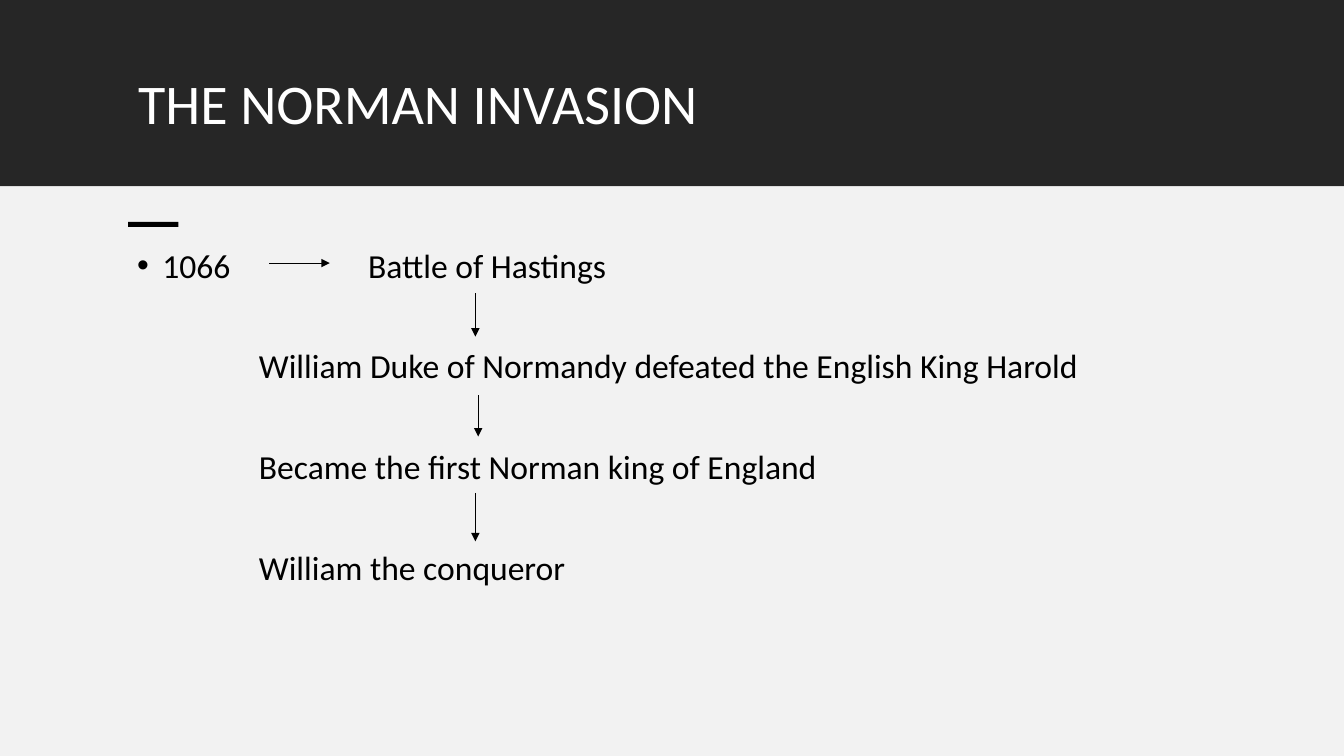
"""Build a slide on the Norman invasion as a chain of events."""
from lxml import etree
from pptx import Presentation
from pptx.dml.color import RGBColor
from pptx.enum.shapes import MSO_CONNECTOR, MSO_SHAPE
from pptx.enum.text import MSO_ANCHOR, MSO_AUTO_SIZE, PP_ALIGN
from pptx.oxml.ns import qn
from pptx.util import Cm, Pt

RECTANGLE = MSO_SHAPE.RECTANGLE
STRAIGHT = MSO_CONNECTOR.STRAIGHT
TOP, LEFT, NO_FIT = MSO_ANCHOR.TOP, PP_ALIGN.LEFT, MSO_AUTO_SIZE.NONE
FONT = "Calibri"
COLORS = {"band": "262626", "panel": "F2F2F2", "ink": "000000", "heading": "FFFFFF"}


def add_block(left, top, width, height, color):
    block = slide.shapes.add_shape(RECTANGLE, Cm(left), Cm(top), Cm(width), Cm(height))
    block.shadow.inherit = False
    block.fill.solid()
    block.fill.fore_color.rgb = RGBColor.from_string(COLORS[color])
    block.line.fill.background()
    return block


def add_text(paragraph, text, size, color):
    paragraph.alignment = LEFT
    paragraph.line_spacing = 0.9
    run = paragraph.add_run()
    run.text = text
    run.font.name = FONT
    run.font.size = Pt(size)
    run.font.color.rgb = RGBColor.from_string(COLORS[color])


prs = Presentation()
prs.slide_width, prs.slide_height = Cm(33.87), Cm(19.05)
slide = prs.slides.add_slide(prs.slide_layouts[1])
heading, events = slide.placeholders

for holder, left, top, height in ((heading, 3.23, 1.78, 2.49), (events, 3.2, 6.15, 11)):
    holder.left, holder.top = Cm(left), Cm(top)
    holder.width, holder.height = Cm(27.46), Cm(height)
    holder.text_frame.word_wrap = True
    holder.text_frame.auto_size = NO_FIT
    holder.text_frame.vertical_anchor = TOP

header_band = add_block(0, 0, 33.87, 4.7, "band")
content_panel = add_block(0, 4.7, 33.87, 14.35, "panel")
accent_dash = add_block(3.23, 5.59, 1.27, 0.13, "ink")
heading._element.addprevious(header_band._element)
events._element.addprevious(content_panel._element)
events._element.addprevious(accent_dash._element)

add_text(heading.text_frame.paragraphs[0], "THE NORMAN INVASION", 40, "heading")

chain = [
    "1066\tBattle of Hastings",
    "William Duke of Normandy defeated the English King Harold",
    "Became the first Norman king of England",
    "William the conqueror",
]
for step, text in enumerate(chain):
    event = events.text_frame.paragraphs[0] if step == 0 else events.text_frame.add_paragraph()
    add_text(event, text, 24, "ink")
    event.space_before = Pt(46 if step else 0)
    layout = event._p.get_or_add_pPr()
    if step:
        layout.set("marL", str(Cm(3.07)))
        layout.set("indent", "0")
        etree.SubElement(layout, qn("a:buNone"))
    else:
        layout.set("marL", str(Cm(0.64)))
        layout.set("indent", str(-Cm(0.64)))
        etree.SubElement(layout, qn("a:buFont"), typeface="Arial")
        etree.SubElement(layout, qn("a:buChar"), char="•")
        tabs = etree.SubElement(layout, qn("a:tabLst"))
        etree.SubElement(tabs, qn("a:tab"), pos=str(Cm(5.82)), algn="l")

arrows = [
    (6.78, 6.63, 8.31, 6.63),
    (11.98, 7.39, 11.98, 8.48),
    (12.05, 9.96, 12.05, 11),
    (11.98, 12.42, 11.98, 13.64),
]
for ends in arrows:
    arrow = slide.shapes.add_connector(STRAIGHT, *map(Cm, ends))
    arrow.line.color.rgb = RGBColor.from_string(COLORS["ink"])
    arrow.line.width = Pt(0.5)
    etree.SubElement(arrow.line._get_or_add_ln(), qn("a:tailEnd"), type="triangle")
    etree.SubElement(arrow._element.spPr, qn("a:effectLst"))

prs.save("out.pptx")
